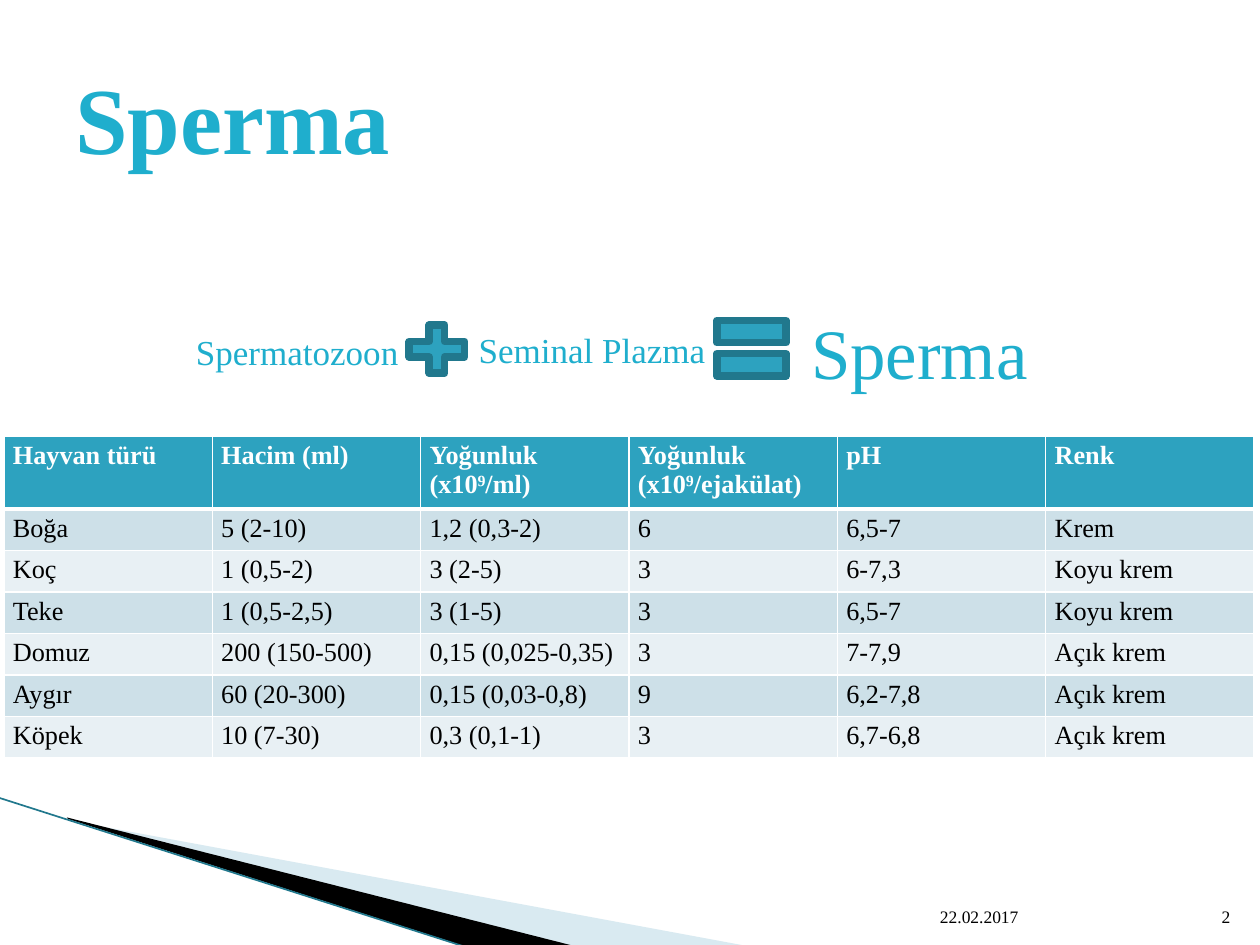
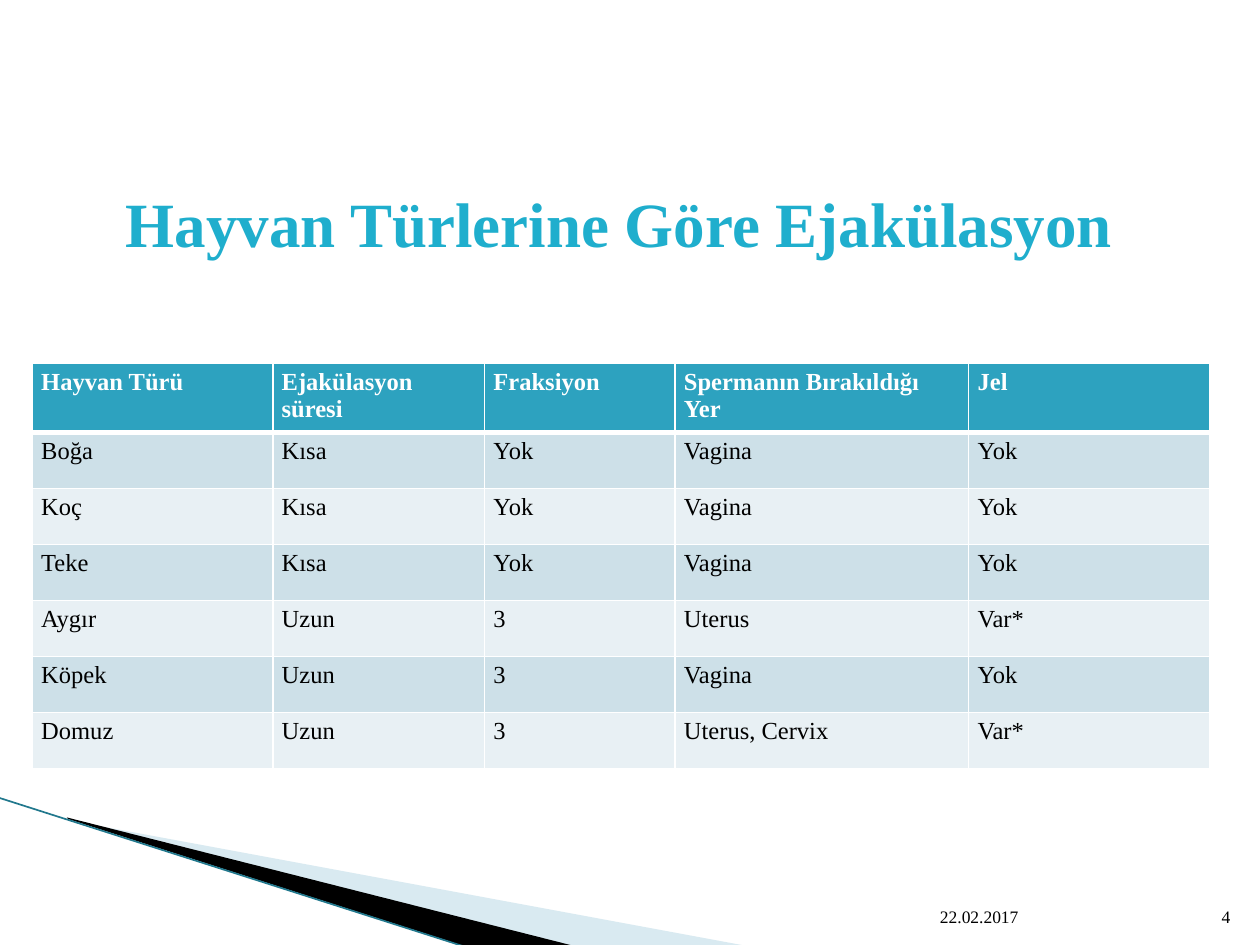
from dataclasses import dataclass
from typing import NamedTuple

from lxml.etree import SubElement
from pptx import Presentation
from pptx.dml.color import RGBColor
from pptx.enum.shapes import MSO_CONNECTOR, MSO_SHAPE
from pptx.enum.text import MSO_ANCHOR as Anchor, PP_ALIGN as Align
from pptx.oxml.ns import qn
from pptx.util import Cm, Pt


@dataclass(frozen=True)
class Theme:
    font: str = "Times New Roman"
    title: str = "1FAECD"
    accent: str = "2DA2BF"
    accent_dark: str = "21788D"
    swoosh: str = "A0CBDC"
    band_dark: str = "CDE0E8"
    band_light: str = "E8F0F4"
    black: str = "000000"
    white: str = "FFFFFF"
    title_size: float = 54
    long_title_size: float = 36
    term_size: float = 20
    result_size: float = 40.5
    footer_size: float = 10
    symbol_line: float = 4.33
    swoosh_line: float = 0.95
    grid_line: float = 1
    header_line: float = 3


THEME = Theme()


class Box(NamedTuple):
    """Left, top, width and height in centimetres."""
    left: float
    top: float
    width: float
    height: float

    def lengths(self) -> list:
        return [Cm(value) for value in self]


class Label(NamedTuple):
    text: str
    box: Box
    size: float
    color: str = THEME.title
    bold: bool = False
    anchor: Anchor = Anchor.TOP
    align: Align = Align.LEFT
    wrap: bool = True


class Symbol(NamedTuple):
    kind: MSO_SHAPE
    box: Box


class Grid(NamedTuple):
    left: float
    top: float
    columns: list[float]
    header_height: float
    row_height: float
    size: float
    rows: list[list[str]]


class Swoosh(NamedTuple):
    points: list[tuple[float, float]]
    color: str
    opacity: int


DATE = "22.02.2017"
SWOOSHES = [
    Swoosh([(1.4, 16.54), (15.11, 19.08), (11.58, 19.08), (1.4, 16.51)], THEME.swoosh, 40),
    Swoosh([(1.35, 16.48), (11.61, 19.08), (9.45, 19.1), (1.37, 16.51)], THEME.black, 100),
]

FORMULA_LABELS = [
    Label("Spermatozoon", Box(3.7, 6.53, 4.86, 0.84), THEME.term_size, wrap=False),
    Label("Seminal Plazma", Box(9.4, 6.5, 5.11, 1.12), THEME.term_size, wrap=False),
    Label("Sperma", Box(16.1, 6.1, 5.44, 1.98), THEME.result_size),
]
FORMULA_SYMBOLS = [
    Symbol(MSO_SHAPE.MATH_EQUAL, Box(14.2, 6.07, 1.9, 1.9)),
    Symbol(MSO_SHAPE.MATH_PLUS, Box(8.05, 6.38, 1.52, 1.32)),
]

SEMEN_GRID = Grid(0.08, 8.79, [4.2] * 6, 1.45, 0.83, 15, [
    ["Hayvan türü", "Hacim (ml)", "Yoğunluk (x10⁹/ml)", "Yoğunluk (x10⁹/ejakülat)", "pH", "Renk"],
    ["Boğa", "5 (2-10)", "1,2 (0,3-2)", "6", "6,5-7", "Krem"],
    ["Koç", "1 (0,5-2)", "3 (2-5)", "3", "6-7,3", "Koyu krem"],
    ["Teke", "1 (0,5-2,5)", "3 (1-5)", "3", "6,5-7", "Koyu krem"],
    ["Domuz", "200 (150-500)", "0,15 (0,025-0,35)", "3", "7-7,9", "Açık krem"],
    ["Aygır", "60 (20-300)", "0,15 (0,03-0,8)", "9", "6,2-7,8", "Açık krem"],
    ["Köpek", "10 (7-30)", "0,3 (0,1-1)", "3", "6,7-6,8", "Açık krem"],
])
EJACULATION_GRID = Grid(0.65, 7.33, [4.85, 4.27, 3.84, 5.92, 4.85], 1.27, 1.13, 14, [
    ["Hayvan Türü", "Ejakülasyon süresi", "Fraksiyon", "Spermanın Bırakıldığı Yer", "Jel"],
    ["Boğa", "Kısa", "Yok", "Vagina", "Yok"],
    ["Koç", "Kısa", "Yok", "Vagina", "Yok"],
    ["Teke", "Kısa", "Yok", "Vagina", "Yok"],
    ["Aygır", "Uzun", "3", "Uterus", "Var*"],
    ["Köpek", "Uzun", "3", "Vagina", "Yok"],
    ["Domuz", "Uzun", "3", "Uterus, Cervix", "Var*"],
])


def rgb(color: str) -> RGBColor:
    return RGBColor.from_string(color)


def paint(fill, color: str) -> None:
    fill.solid()
    fill.fore_color.rgb = rgb(color)


def style_text(para, size: float, color: str, bold: bool) -> None:
    font = para.font
    font.name, font.size, font.bold = THEME.font, Pt(size), bold
    font.color.rgb = rgb(color)


def add_label(page, label: Label) -> None:
    frame = page.shapes.add_textbox(*label.box.lengths()).text_frame
    frame.word_wrap = label.wrap
    frame.vertical_anchor = label.anchor
    para = frame.paragraphs[0]
    para.text, para.alignment = label.text, label.align
    style_text(para, label.size, label.color, label.bold)


def add_symbol(page, symbol: Symbol) -> None:
    shape = page.shapes.add_shape(symbol.kind, *symbol.box.lengths())
    shape.shadow.inherit = False
    paint(shape.fill, THEME.accent)
    shape.line.color.rgb = rgb(THEME.accent_dark)
    shape.line.width = Pt(THEME.symbol_line)


def add_swoosh(page, swoosh: Swoosh) -> None:
    start, *others = [(Cm(x), Cm(y)) for x, y in swoosh.points]
    builder = page.shapes.build_freeform(*start)
    builder.add_line_segments(others, close=True)
    shape = builder.convert_to_shape()
    shape.shadow.inherit = False
    paint(shape.fill, swoosh.color)
    shape.line.fill.background()
    if swoosh.opacity < 100:
        color = shape.fill._xPr.find(qn("a:solidFill"))[0]
        SubElement(color, qn("a:alpha"), val=str(swoosh.opacity * 1000))


def add_swoosh_edge(page) -> None:
    edge = page.shapes.add_connector(
        MSO_CONNECTOR.STRAIGHT, Cm(-0.03), Cm(16.08), Cm(9.42), Cm(19.1))
    edge.line.color.rgb = rgb(THEME.accent_dark)
    edge.line.width = Pt(THEME.swoosh_line)
    SubElement(edge._element.spPr, qn("a:effectLst"))


def add_borders(cell, top: float, bottom: float) -> None:
    """Draw white borders; they must be added before the cell's fill."""
    properties = cell._tc.get_or_add_tcPr()
    side = THEME.grid_line
    for tag, width in zip(("lnL", "lnR", "lnT", "lnB"), (side, side, top, bottom)):
        line = SubElement(properties, qn(f"a:{tag}"), w=str(Pt(width)))
        fill = SubElement(line, qn("a:solidFill"))
        SubElement(fill, qn("a:srgbClr"), val=THEME.white)


def add_grid(page, grid: Grid) -> None:
    heights = [grid.header_height] + [grid.row_height] * (len(grid.rows) - 1)
    box = Box(grid.left, grid.top, sum(grid.columns), sum(heights))
    table = page.shapes.add_table(len(heights), len(grid.columns), *box.lengths()).table
    for column, width in zip(table.columns, grid.columns):
        column.width = Cm(width)
    for index, (height, texts) in enumerate(zip(heights, grid.rows)):
        header = index == 0
        band = THEME.band_dark if index % 2 else THEME.band_light
        row = table.rows[index]
        row.height = Cm(height)
        for cell, text in zip(row.cells, texts):
            cell.margin_left = cell.margin_right = Cm(0.18)
            cell.margin_top = cell.margin_bottom = Cm(0.1)
            add_borders(cell,
                        top=THEME.header_line if index == 1 else THEME.grid_line,
                        bottom=THEME.header_line if header else THEME.grid_line)
            paint(cell.fill, THEME.accent if header else band)
            cell.text = text
            style_text(cell.text_frame.paragraphs[0], grid.size,
                       THEME.white if header else THEME.black, header)


def add_page(deck, title: str, title_box: Box, title_size: float, number: int):
    """Add a slide with the corner swoosh, title, date and slide number."""
    page = deck.slides.add_slide(deck.slide_layouts[6])
    for swoosh in SWOOSHES:
        add_swoosh(page, swoosh)
    add_swoosh_edge(page)
    add_label(page, Label(title, title_box, title_size, bold=True, anchor=Anchor.MIDDLE))
    add_label(page, Label(DATE, Box(18.7, 17.8, 5.33, 1.02), THEME.footer_size,
                          THEME.black, anchor=Anchor.BOTTOM))
    add_label(page, Label(str(number), Box(24.03, 17.8, 1.02, 1.02), THEME.footer_size,
                          THEME.black, anchor=Anchor.BOTTOM, align=Align.RIGHT))
    return page


def main() -> None:
    deck = Presentation()
    deck.slide_width, deck.slide_height = Cm(25.4), Cm(19.05)

    sperm_page = add_page(deck, "Sperma", Box(1.27, 0.76, 22.86, 3.18), THEME.title_size, 2)
    for label in FORMULA_LABELS:
        add_label(sperm_page, label)
    for symbol in FORMULA_SYMBOLS:
        add_symbol(sperm_page, symbol)
    add_grid(sperm_page, SEMEN_GRID)

    species_page = add_page(deck, "Hayvan Türlerine Göre Ejakülasyon",
                            Box(2.29, 2.97, 20.96, 3.02), THEME.long_title_size, 4)
    add_grid(species_page, EJACULATION_GRID)

    deck.save("out.pptx")


if __name__ == "__main__":
    main()
